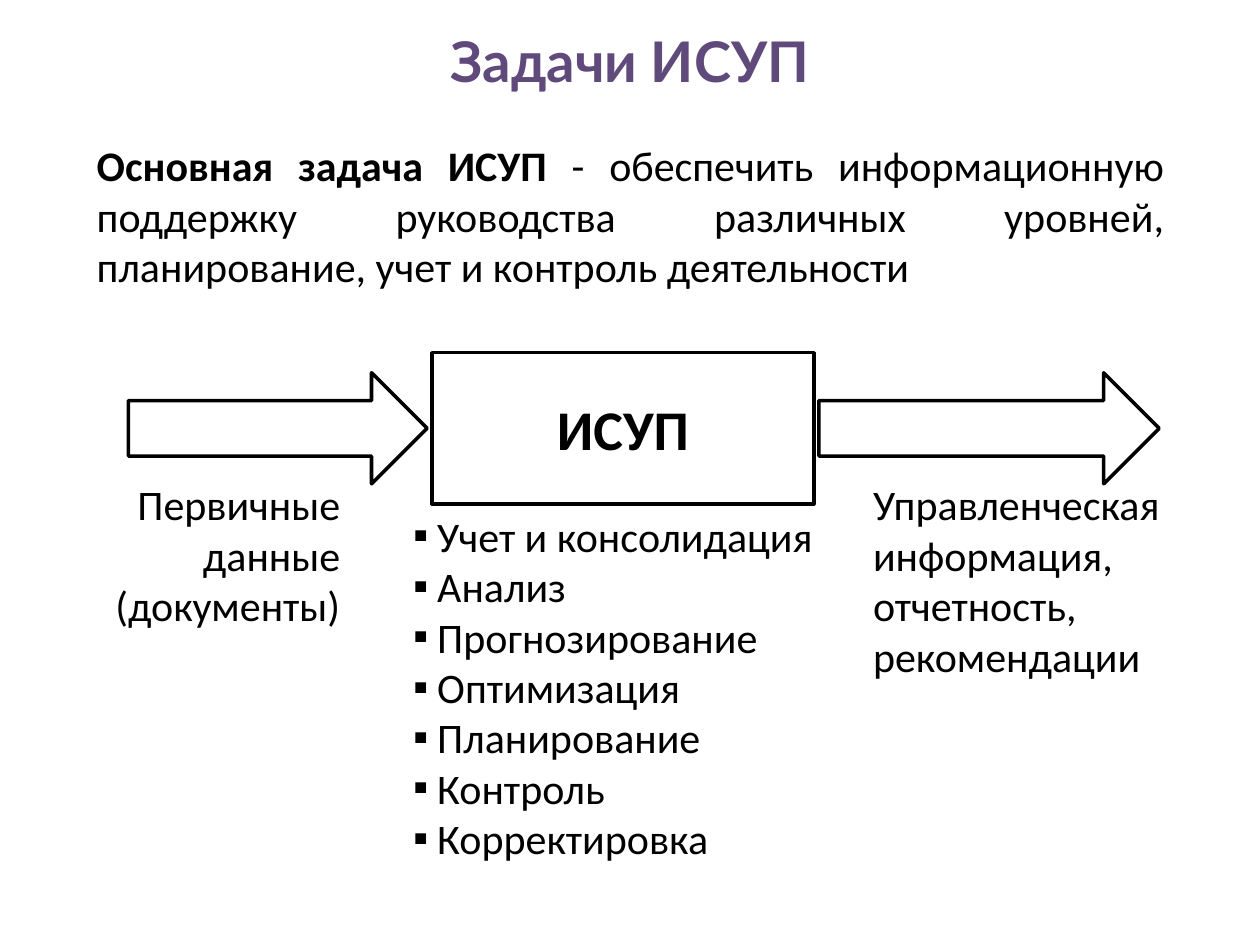
from lxml import etree
from pptx import Presentation
from pptx.dml.color import RGBColor
from pptx.enum import shapes, text
from pptx.oxml import ns
from pptx.util import Cm, Pt

COLORS = {"title": "604A7B", "ink": "000000", "fill": "FFFFFF"}
ALIGN = text.PP_ALIGN
TASKS = ["Учет и консолидация", "Анализ", "Прогнозирование", "Оптимизация",
         "Планирование", "Контроль", "Корректировка"]


def color(name):
    return RGBColor.from_string(COLORS[name])


def place(shape, box):
    shape.left, shape.top, shape.width, shape.height = map(Cm, box)


def add_run(para, words, size=24, bold=False, font="Calibri", ink="ink"):
    run = para.add_run()
    run.text = words
    run.font.size = Pt(size)
    run.font.bold = bold
    run.font.name = font
    run.font.color.rgb = color(ink)


def add_text(slide, box, runs, align):
    """Add a wrapped text box; runs holds (words, bold) pairs."""
    frame = slide.shapes.add_textbox(*map(Cm, box)).text_frame
    frame.word_wrap = True
    para = frame.paragraphs[0]
    para.alignment = align
    for words, bold in runs:
        add_run(para, words, bold=bold)


def add_block(slide, kind, box):
    shape = slide.shapes.add_shape(kind, *map(Cm, box))
    shape.shadow.inherit = False
    shape.fill.solid()
    shape.fill.fore_color.rgb = color("fill")
    shape.line.color.rgb = color("ink")
    shape.line.width = Pt(2)
    return shape


def add_bullet(para):
    props = para._p.get_or_add_pPr()
    props.set("marL", str(Cm(1.02)))
    props.set("indent", str(Cm(-0.48)))
    etree.SubElement(props, ns.qn("a:buFont")).set("typeface", "Calibri")
    etree.SubElement(props, ns.qn("a:buChar")).set("char", "▪")


def draw_title(slide, box):
    title = slide.shapes.title
    place(title, box)
    frame = title.text_frame
    frame.auto_size = text.MSO_AUTO_SIZE.NONE
    frame.vertical_anchor = text.MSO_ANCHOR.TOP
    para = frame.paragraphs[0]
    para.alignment = ALIGN.CENTER
    add_run(para, "Задачи ИСУП", 32, True, "Lato", "title")


def draw_intro(slide, box):
    add_text(slide, box, [
        ("Основная задача ИСУП", True),
        (" - обеспечить информационную поддержку руководства различных "
         "уровней, планирование, учет и контроль деятельности", False),
    ], ALIGN.JUSTIFY)


def draw_flow(slide, box):
    """Input arrow, system block and output arrow on one middle line."""
    left, top, width, height = box
    gap, arrow_h = 0.1, 2.24
    in_w, core_w = 6.02, 7.7
    arrow_y = top + (height - arrow_h) / 2
    core_x = left + in_w + gap
    out_x = core_x + core_w + gap
    kinds = shapes.MSO_SHAPE

    core = add_block(slide, kinds.RECTANGLE, (core_x, top, core_w, height))
    frame = core.text_frame
    frame.margin_left = frame.margin_right = 0
    frame.margin_top = frame.margin_bottom = 0
    frame.vertical_anchor = text.MSO_ANCHOR.MIDDLE
    frame.paragraphs[0].alignment = ALIGN.CENTER
    add_run(frame.paragraphs[0], "ИСУП", 32, True)

    for x, w in ((left, in_w), (out_x, left + width - out_x)):
        add_block(slide, kinds.RIGHT_ARROW, (x, arrow_y, w, arrow_h))


def draw_labels(slide, box):
    """Captions below the two arrows, at both ends of the box."""
    left, top, width, height = box
    in_w, out_w = 5.38, 6.83
    add_text(slide, (left, top, in_w, 3.33),
             [("Первичные данные (документы)", False)], ALIGN.RIGHT)
    add_text(slide, (left + width - out_w, top, out_w, height),
             [("Управленческая информация, отчетность, рекомендации", False)],
             ALIGN.LEFT)


def draw_tasks(slide, box):
    body = slide.placeholders[1]
    place(body, box)
    frame = body.text_frame
    frame.auto_size = text.MSO_AUTO_SIZE.NONE
    for i, task in enumerate(TASKS):
        para = frame.add_paragraph() if i else frame.paragraphs[0]
        add_bullet(para)
        para.space_before = Pt(0)
        add_run(para, task)


def main():
    deck = Presentation()
    deck.slide_width, deck.slide_height = Cm(25.4), Cm(19.05)
    slide = deck.slides.add_slide(deck.slide_layouts[1])
    draw_title(slide, (1.27, 0.41, 22.86, 2.97))
    draw_flow(slide, (2.59, 7.11, 20.78, 3.05))
    draw_labels(slide, (1.73, 9.53, 22.45, 4.37))
    draw_tasks(slide, (7.54, 10.16, 9.8, 7.44))
    draw_intro(slide, (1.7, 2.69, 22.02, 3.33))
    deck.save("out.pptx")


if __name__ == "__main__":
    main()
